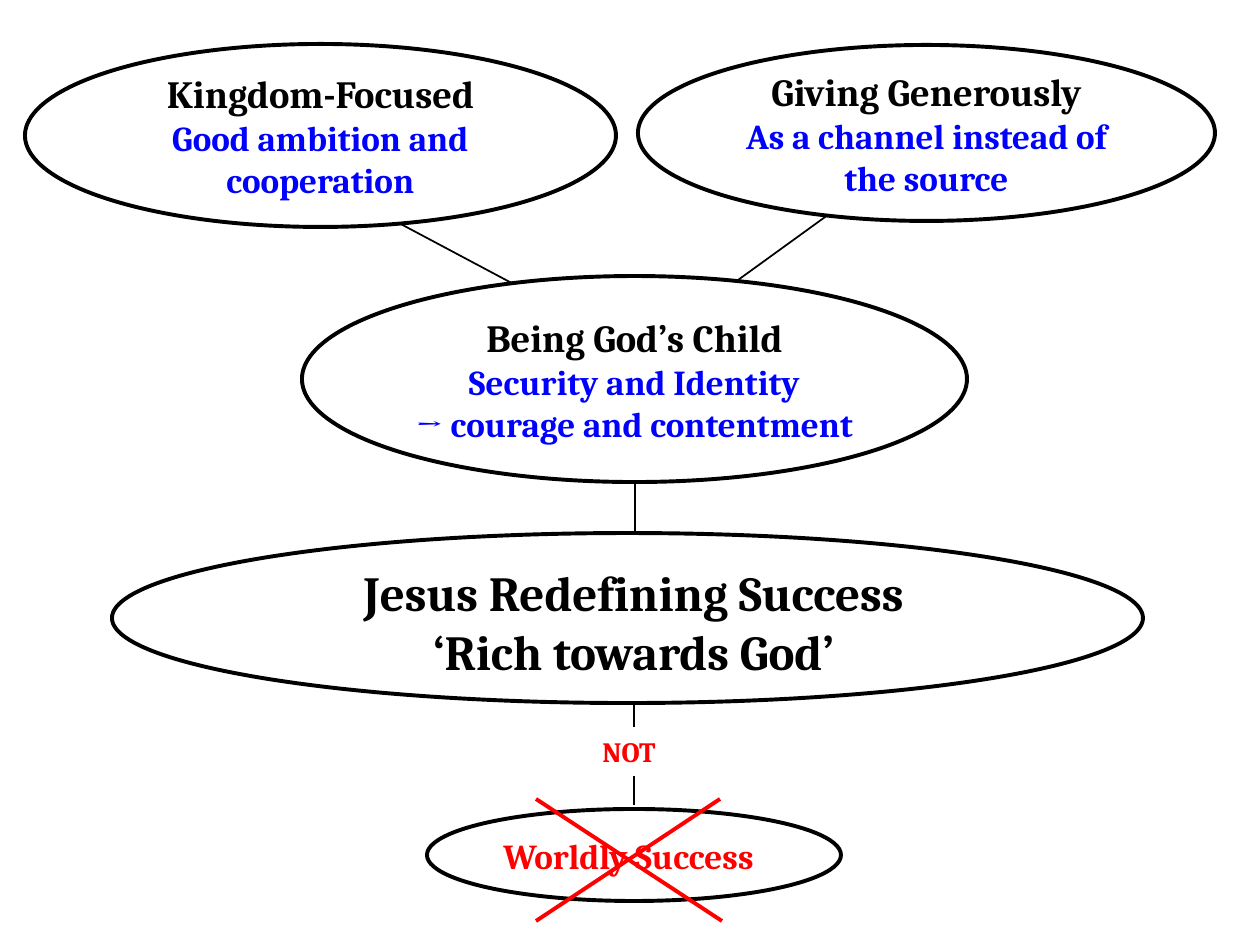
from lxml import etree
from pptx import Presentation
from pptx.dml.color import RGBColor
from pptx.enum.shapes import MSO_CONNECTOR, MSO_SHAPE
from pptx.enum.text import MSO_ANCHOR, PP_ALIGN
from pptx.oxml.ns import qn
from pptx.util import Emu, Pt

STRAIGHT = MSO_CONNECTOR.STRAIGHT
OVAL = MSO_SHAPE.OVAL
RECTANGLE = MSO_SHAPE.RECTANGLE
MIDDLE = MSO_ANCHOR.MIDDLE
TOP = MSO_ANCHOR.TOP
CENTER = PP_ALIGN.CENTER

EMU_PER_PX = 914400 / 126
FONT = "Cambria"
COLORS = {"black": "000000", "white": "FFFFFF", "blue": "0000FF", "red": "FF0000"}


def px(*lengths):
    return [Emu(round(length * EMU_PER_PX)) for length in lengths]


def color(name):
    return RGBColor.from_string(COLORS[name])


def write(shape, lines, anchor=MIDDLE):
    """Fill a shape with centred bold lines of (text, size, colour name)."""
    text_frame = shape.text_frame
    text_frame.word_wrap = True
    text_frame.vertical_anchor = anchor
    text_frame.text = "\n".join(text for text, _, _ in lines)
    for paragraph, (_, size, color_name) in zip(text_frame.paragraphs, lines):
        paragraph.alignment = CENTER
        for run in paragraph.runs:
            run.font.name = FONT
            run.font.size = Pt(size)
            run.font.bold = True
            run.font.color.rgb = color(color_name)


def add_box(shapes, kind, box, line_color="black", line_width=2.25):
    shape = shapes.add_shape(kind, *px(*box))
    shape.shadow.inherit = False
    shape.fill.solid()
    shape.fill.fore_color.rgb = color("white")
    shape.line.color.rgb = color(line_color)
    shape.line.width = Pt(line_width)
    return shape


def add_label(shapes, box, lines):
    write(shapes.add_textbox(*px(*box)), lines, TOP)


def add_line(shapes, ends, color_name="black", width=1):
    connector = shapes.add_connector(STRAIGHT, *px(*ends))
    connector.line.color.rgb = color(color_name)
    connector.line.width = Pt(width)
    etree.SubElement(connector._element.spPr, qn("a:effectLst"))


def add_idea(shapes, box, title, *details):
    write(add_box(shapes, OVAL, box),
          [(title, 22, "black")] + [(detail, 20, "blue") for detail in details])


def add_crossed_out(shapes):
    group = shapes.add_group_shape().shapes
    add_box(group, OVAL, (427, 809, 414, 92))
    add_label(group, (365, 828, 527, 55), [("Worldly Success", 20, "red")])
    for start, end in ((536, 722), (720, 536)):
        add_line(group, (start, 799, end, 921), "red", 2.25)


def main():
    presentation = Presentation()
    presentation.slide_width, presentation.slide_height = px(1260, 945)
    slide = presentation.slides.add_slide(presentation.slide_layouts[6])
    shapes = slide.shapes

    add_line(shapes, (634, 702, 634, 805))
    write(add_box(shapes, RECTANGLE, (527, 728, 204, 47), "white", 0.75),
          [("NOT", 16, "red")])
    for ends in ((536, 296, 350, 197), (635, 553, 635, 276), (868, 186, 716, 296)):
        add_line(shapes, ends)

    add_box(shapes, OVAL, (112, 533, 1031, 170))
    add_label(shapes, (93, 556, 1081, 132),
              [("Jesus Redefining Success", 28, "black"),
               ("‘Rich towards God’", 28, "black")])
    add_crossed_out(shapes)

    add_idea(shapes, (638, 45, 577, 176), "Giving Generously",
             "As a channel instead of the source")
    add_idea(shapes, (25, 44, 591, 183), "Kingdom-Focused",
             "Good ambition and cooperation")
    add_idea(shapes, (302, 276, 665, 206), "Being God’s Child",
             "Security and Identity", "→ courage and contentment")
    presentation.save("out.pptx")


if __name__ == "__main__":
    main()
